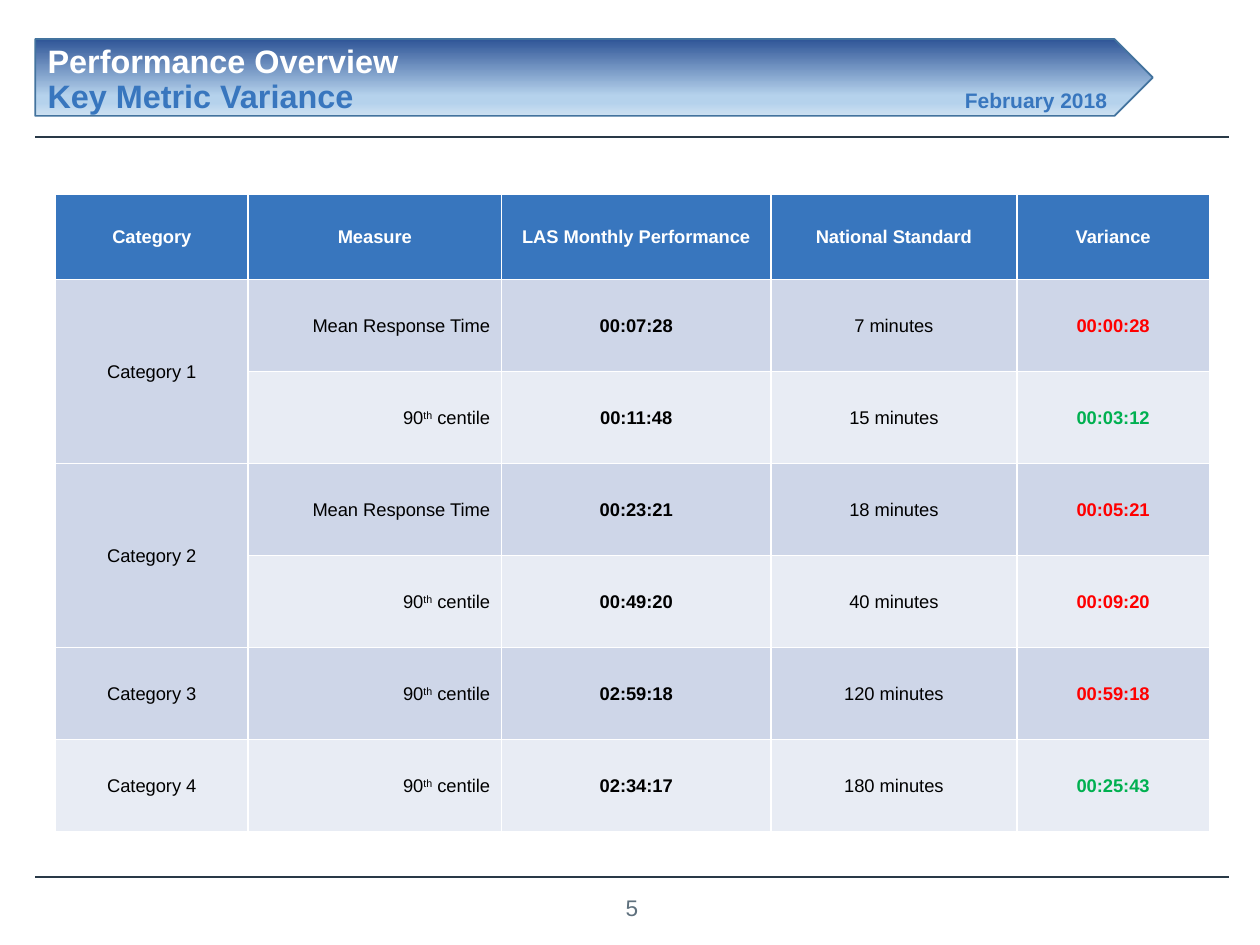
from lxml.etree import SubElement
from pptx import Presentation
from pptx.dml.color import RGBColor
from pptx.enum.shapes import MSO_CONNECTOR, MSO_SHAPE
from pptx.enum.text import MSO_ANCHOR, PP_ALIGN
from pptx.oxml.ns import qn
from pptx.util import Inches, Pt

WHITE = RGBColor(0xFF, 0xFF, 0xFF)
BLACK = RGBColor(0x00, 0x00, 0x00)
BLUE = RGBColor(0x38, 0x76, 0xBE)
EDGE = RGBColor(0x43, 0x73, 0x9E)
SLATE = RGBColor(0x29, 0x39, 0x47)
GREY = RGBColor(0x5E, 0x70, 0x7D)
RED = RGBColor(0xFF, 0x00, 0x00)
GREEN = RGBColor(0x00, 0xB0, 0x50)
BANDS = RGBColor(0xCE, 0xD6, 0xE8), RGBColor(0xE8, 0xEC, 0xF4)
STOPS = (0, "2F5597"), (74, "B5D2EC"), (83, "B5D2EC"), (100, "CEE1F2")

HEADS = ("Category", "Measure", "LAS Monthly Performance",
         "National Standard", "Variance")
WIDTHS = 1.53, 2.01, 2.14, 1.95, 1.53
MEAN = ("Mean Response Time",)
CENTILE = ("90", "th", " centile")
ROWS = (
    ("Category 1", MEAN, "00:07:28", "7 minutes", "00:00:28", RED),
    ("", CENTILE, "00:11:48", "15 minutes", "00:03:12", GREEN),
    ("Category 2", MEAN, "00:23:21", "18 minutes", "00:05:21", RED),
    ("", CENTILE, "00:49:20", "40 minutes", "00:09:20", RED),
    ("Category 3", CENTILE, "02:59:18", "120 minutes", "00:59:18", RED),
    ("Category 4", CENTILE, "02:34:17", "180 minutes", "00:25:43", GREEN),
)


class Deck:
    font = "Arial"
    cell_size = 10.5

    def __init__(self):
        self.prs = Presentation()
        self.prs.slide_width, self.prs.slide_height = Inches(10), Inches(7.5)
        self.slide = self.prs.slides.add_slide(self.prs.slide_layouts[6])

    def style(self, run, size, color, bold=False):
        run.font.name = self.font
        run.font.size = Pt(size)
        run.font.color.rgb = color
        run.font.bold = bold

    def rule(self, y):
        line = self.slide.shapes.add_connector(
            MSO_CONNECTOR.STRAIGHT, Inches(0.28), Inches(y), Inches(9.75), Inches(y))
        line.line.color.rgb = SLATE
        line.line.width = Pt(1)
        SubElement(line._element.spPr, qn("a:effectLst"))

    def banner(self, x, y, w, h):
        shape = self.slide.shapes.add_shape(
            MSO_SHAPE.PENTAGON, Inches(x), Inches(y), Inches(w), Inches(h))
        shape.shadow.inherit = False
        shape.line.color.rgb = EDGE
        shape.line.width = Pt(1)
        shape.fill.gradient()
        shape.fill.gradient_angle = 270
        stops = shape._element.spPr.find(qn("a:gradFill")).find(qn("a:gsLst"))
        stops.clear()
        for pos, color in STOPS:
            stop = SubElement(stops, qn("a:gs"), pos=str(pos * 1000))
            SubElement(stop, qn("a:srgbClr"), val=color)

    def box(self, x, y, w, h):
        frame = self.slide.shapes.add_textbox(
            Inches(x), Inches(y), Inches(w), Inches(h)).text_frame
        frame.word_wrap = True
        return frame

    def title(self, x, y, w, h, top, left, right):
        """Write two lines; the second ends in a note at a right tab."""
        frame = self.box(x, y, w, h)
        frame.text = f"{top}\n{left}"
        first, last = frame.paragraphs
        tabs = SubElement(last._p.get_or_add_pPr(), qn("a:tabLst"))
        SubElement(tabs, qn("a:tab"), pos=str(Inches(8.41)), algn="r")
        first.line_spacing = last.line_spacing = 0.9
        self.style(first.runs[0], 18.5, WHITE, True)
        self.style(last.runs[0], 18.5, BLUE, True)
        note = last.add_run()
        note.text = f"\t{right}"
        self.style(note, 12, BLUE, True)

    def number(self, x, y, w, h, text):
        frame = self.box(x, y, w, h)
        frame.margin_left = frame.margin_right = 0
        frame.margin_top = frame.margin_bottom = 0
        frame.vertical_anchor = MSO_ANCHOR.MIDDLE
        frame.text = text
        frame.paragraphs[0].alignment = PP_ALIGN.CENTER
        self.style(frame.paragraphs[0].runs[0], 12.9, GREY)

    def cell(self, cell, parts, fill, color=BLACK, bold=False, right=False):
        """Fill one cell; a second part is set as superscript."""
        cell.margin_left = cell.margin_top = Inches(0.01)
        cell.margin_right = Inches(0.09 if right else 0.01)
        cell.margin_bottom = 0
        cell.vertical_anchor = MSO_ANCHOR.MIDDLE
        for side in ("lnL", "lnR", "lnT", "lnB"):
            line = SubElement(cell._tc.get_or_add_tcPr(), qn(f"a:{side}"),
                              w=str(Pt(1)))
            SubElement(SubElement(line, qn("a:solidFill")),
                       qn("a:srgbClr"), val=str(WHITE))
        cell.fill.solid()
        cell.fill.fore_color.rgb = fill
        para = cell.text_frame.paragraphs[0]
        para.alignment = PP_ALIGN.RIGHT if right else PP_ALIGN.CENTER
        for i, part in enumerate(parts):
            run = para.add_run()
            run.text = part
            self.style(run, self.cell_size, color, bold)
            if i == 1:
                run.font._element.set("baseline", "30000")

    def table(self, x, y, w, h):
        table = self.slide.shapes.add_table(
            len(ROWS) + 1, len(HEADS), Inches(x), Inches(y), Inches(w), Inches(h)).table
        for col, width in zip(table.columns, WIDTHS):
            col.width = Inches(width)
        for i, row in enumerate(table.rows):
            row.height = Inches(0.73 if i else 0.68)
        for c, head in enumerate(HEADS):
            self.cell(table.cell(0, c), (head,), BLUE, WHITE, True)
        for r, (group, measure, actual, target, gap, color) in enumerate(ROWS, 1):
            band = BANDS[(r - 1) % 2]
            self.cell(table.cell(r, 0), (group,) if group else (), band)
            self.cell(table.cell(r, 1), measure, band, right=True)
            self.cell(table.cell(r, 2), (actual,), band, bold=True)
            self.cell(table.cell(r, 3), (target,), band)
            self.cell(table.cell(r, 4), (gap,), band, color, True)
            if not group:
                table.cell(r - 1, 0).merge(table.cell(r, 0))


def main():
    deck = Deck()
    deck.number(4.9, 7.08, 0.23, 0.25, "5")
    for y in (1.09, 6.96):
        deck.rule(y)
    deck.banner(0.28, 0.31, 8.87, 0.61)
    deck.title(0.28, 0.31, 8.87, 0.78, "Performance Overview",
               "Key Metric Variance", "February 2018")
    deck.table(0.44, 1.54, 9.15, 5.05)
    deck.prs.save("out.pptx")


if __name__ == "__main__":
    main()
